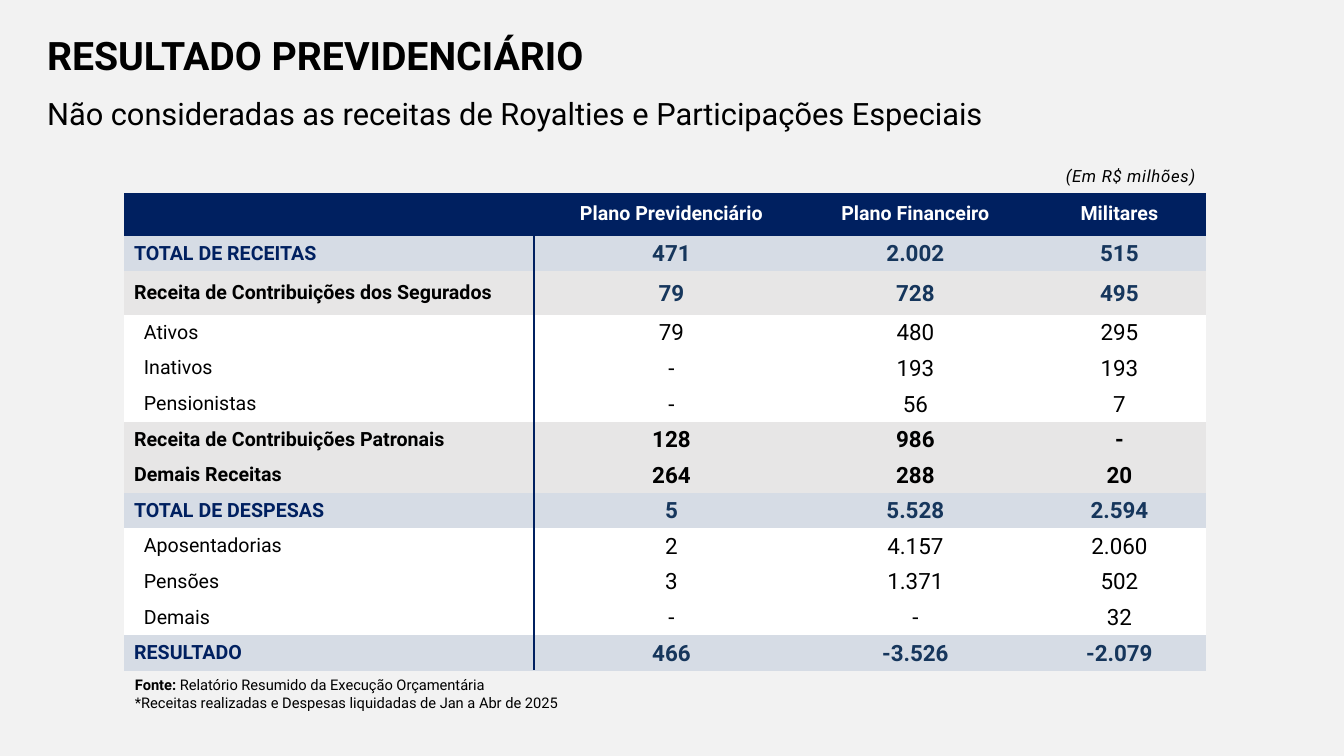
import dataclasses
import typing

import pptx
import pptx.dml.color
import pptx.enum.shapes
import pptx.enum.text
import pptx.oxml.ns
import pptx.util
from lxml import etree

Pt = pptx.util.Pt
RGBColor = pptx.dml.color.RGBColor
Align = pptx.enum.text.PP_ALIGN
Anchor = pptx.enum.text.MSO_ANCHOR
AutoSize = pptx.enum.text.MSO_AUTO_SIZE
qualified = pptx.oxml.ns.qn

FONT = "Roboto"
BLACK = RGBColor(0x00, 0x00, 0x00)
WHITE = RGBColor(0xFF, 0xFF, 0xFF)
PAGE_GREY = RGBColor(0xF2, 0xF2, 0xF2)
NAVY = RGBColor(0x00, 0x20, 0x60)
FIGURE_BLUE = RGBColor(0x16, 0x36, 0x5C)
TOTAL_BLUE = RGBColor(0xD6, 0xDC, 0xE5)
GROUP_GREY = RGBColor(0xE7, 0xE6, 0xE6)
NO_STYLE = "{2D5ABB26-0587-4C30-8999-92F81FD0307C}"

TABLE_LEFT, TABLE_TOP = 88.6, 137.5
COLUMN_WIDTHS = (301, 180, 168.5, 123)
TALL_ROW, ROW = 31, 25.45
LABEL_INSETS = (7.2, 3.6, 7.2, 3.6)
ITEM_INSETS = (14.2, 3.6, 7.2, 3.6)
FIGURE_INSETS = (0.7, 0.7, 0.7, 0)


@dataclasses.dataclass(frozen=True)
class Span:
    text: str
    size: float
    bold: bool = False
    italic: bool = False
    spacing: int = 0  # hundredths of a point


@dataclasses.dataclass(frozen=True)
class TextBlock:
    frame: tuple[float, float, float, float]
    paragraphs: tuple[tuple[Span, ...], ...]
    align: Align = Align.LEFT
    anchor: Anchor = Anchor.TOP
    line_spacing: float = 1.0
    auto_size: AutoSize = AutoSize.NONE


@dataclasses.dataclass(frozen=True)
class RowStyle:
    fill: RGBColor
    label_color: RGBColor = BLACK
    figure_color: RGBColor = BLACK
    bold: bool = True
    label_insets: tuple[float, ...] = LABEL_INSETS
    figure_insets: tuple[float, ...] = FIGURE_INSETS
    figure_size: float = 16
    height: float = ROW


@dataclasses.dataclass(frozen=True)
class TableRow:
    style: RowStyle
    label: str
    figures: tuple[str, str, str]


HEADER = RowStyle(NAVY, WHITE, WHITE, figure_insets=LABEL_INSETS, figure_size=14, height=TALL_ROW)
TOTAL = RowStyle(TOTAL_BLUE, NAVY, FIGURE_BLUE)
INSURED = RowStyle(GROUP_GREY, figure_color=FIGURE_BLUE, height=TALL_ROW)
GROUP = RowStyle(GROUP_GREY)
ITEM = RowStyle(WHITE, bold=False, label_insets=ITEM_INSETS)

ROWS = (
    TableRow(HEADER, "", ("Plano Previdenciário", "Plano Financeiro", "Militares")),
    TableRow(TOTAL, "TOTAL DE RECEITAS", ("471", "2.002", "515")),
    TableRow(INSURED, "Receita de Contribuições dos Segurados", ("79", "728", "495")),
    TableRow(ITEM, "Ativos", ("79", "480", "295")),
    TableRow(ITEM, "Inativos", ("-", "193", "193")),
    TableRow(ITEM, "Pensionistas", ("-", "56", "7")),
    TableRow(GROUP, "Receita de Contribuições Patronais", ("128", "986", "-")),
    TableRow(GROUP, "Demais Receitas", ("264", "288", "20")),
    TableRow(TOTAL, "TOTAL DE DESPESAS", ("5", "5.528", "2.594")),
    TableRow(ITEM, "Aposentadorias", ("2", "4.157", "2.060")),
    TableRow(ITEM, "Pensões", ("3", "1.371", "502")),
    TableRow(ITEM, "Demais", ("-", "-", "32")),
    TableRow(TOTAL, "RESULTADO", ("466", "-3.526", "-2.079")),
)

TEXT_BLOCKS = (
    TextBlock((26.6, 13, 565, 56.9), ((Span("RESULTADO PREVIDENCIÁRIO", 28, bold=True),),),
              anchor=Anchor.MIDDLE, line_spacing=0.9),
    TextBlock((26.6, 56.9, 907, 42.5),
              ((Span("Não consideradas as receitas de Royalties e Participações Especiais", 22),),),
              anchor=Anchor.MIDDLE, line_spacing=1.2),
    TextBlock((710.6, 112.3, 150.5, 30.2),
              ((Span("(Em R$ milhões)", 12, italic=True, spacing=50),),),
              align=Align.RIGHT, line_spacing=1.2),
    TextBlock((89.3, 479.5, 577.4, 32.4),
              ((Span("Fonte: ", 10.5, bold=True),
                Span("Relatório Resumido da Execução Orçamentária", 10.5)),
               (Span("*Receitas realizadas e Despesas liquidadas de Jan a Abr de 2025", 10.5),)),
              auto_size=AutoSize.SHAPE_TO_FIT_TEXT),
)


def apply_format(target: typing.Any, values: dict[str, typing.Any]) -> None:
    for name, value in values.items():
        setattr(target, name, value)


def add_span(para: typing.Any, content: Span, color: RGBColor) -> None:
    span = para.add_run()
    span.text = content.text
    apply_format(span.font, {"name": FONT, "size": Pt(content.size),
                             "bold": content.bold, "italic": content.italic})
    span.font.color.rgb = color


def add_text_block(page: typing.Any, block: TextBlock) -> None:
    box = page.shapes.add_textbox(*map(Pt, block.frame))
    apply_format(box.text_frame, {"word_wrap": True, "auto_size": block.auto_size,
                                  "vertical_anchor": block.anchor})
    for index, spans in enumerate(block.paragraphs):
        para = box.text_frame.add_paragraph() if index else box.text_frame.paragraphs[0]
        apply_format(para, {"alignment": block.align, "line_spacing": block.line_spacing})
        for content in spans:
            add_span(para, content, BLACK)
    # Letter spacing
    contents = [content for spans in block.paragraphs for content in spans]
    for properties, content in zip(box.element.iter(qualified("a:rPr")), contents):
        if content.spacing:
            properties.set("spc", str(content.spacing))


def fill_cell(cell: typing.Any, content: Span, color: RGBColor, fill: RGBColor,
              align: Align, insets: tuple[float, ...]) -> None:
    cell.fill.solid()
    cell.fill.fore_color.rgb = fill
    left, top, right, bottom = map(Pt, insets)
    apply_format(cell, {"margin_left": left, "margin_top": top, "margin_right": right,
                        "margin_bottom": bottom, "vertical_anchor": Anchor.MIDDLE})
    para = cell.text_frame.paragraphs[0]
    para.alignment = align
    if content.text:
        add_span(para, content, color)


def add_results_table(page: typing.Any) -> None:
    height = sum(row.style.height for row in ROWS)
    frame = page.shapes.add_table(len(ROWS), len(COLUMN_WIDTHS), Pt(TABLE_LEFT), Pt(TABLE_TOP),
                                  Pt(sum(COLUMN_WIDTHS)), Pt(height))
    table = frame.table
    apply_format(table, {"first_row": False, "horz_banding": False})
    for style_id in frame.element.iter(qualified("a:tableStyleId")):
        style_id.text = NO_STYLE
    for column, width in zip(table.columns, COLUMN_WIDTHS):
        column.width = Pt(width)
    for index, row in enumerate(ROWS):
        style = row.style
        table.rows[index].height = Pt(style.height)
        fill_cell(table.cell(index, 0), Span(row.label, 14, style.bold), style.label_color,
                  style.fill, Align.LEFT, style.label_insets)
        for column_index, figure in enumerate(row.figures, start=1):
            fill_cell(table.cell(index, column_index), Span(figure, style.figure_size, style.bold),
                      style.figure_color, style.fill, Align.CENTER, style.figure_insets)


def add_divider(page: typing.Any) -> None:
    x = Pt(381.6)
    divider = page.shapes.add_connector(pptx.enum.shapes.MSO_CONNECTOR.STRAIGHT,
                                        x, Pt(161.3), x, Pt(478.8))
    divider.line.color.rgb = NAVY
    divider.line.width = Pt(1.5)
    properties = divider.element.find(qualified("p:spPr"))
    etree.SubElement(properties, qualified("a:effectLst"))


def main() -> None:
    deck = pptx.Presentation()
    apply_format(deck, {"slide_width": Pt(960), "slide_height": Pt(540)})
    page = deck.slides.add_slide(deck.slide_layouts[6])
    page.background.fill.solid()
    page.background.fill.fore_color.rgb = PAGE_GREY

    # Headings, unit and source note
    for block in TEXT_BLOCKS:
        add_text_block(page, block)

    # Results by plan, with the line after the label column
    add_results_table(page)
    add_divider(page)

    deck.save("out.pptx")


if __name__ == "__main__":
    main()
